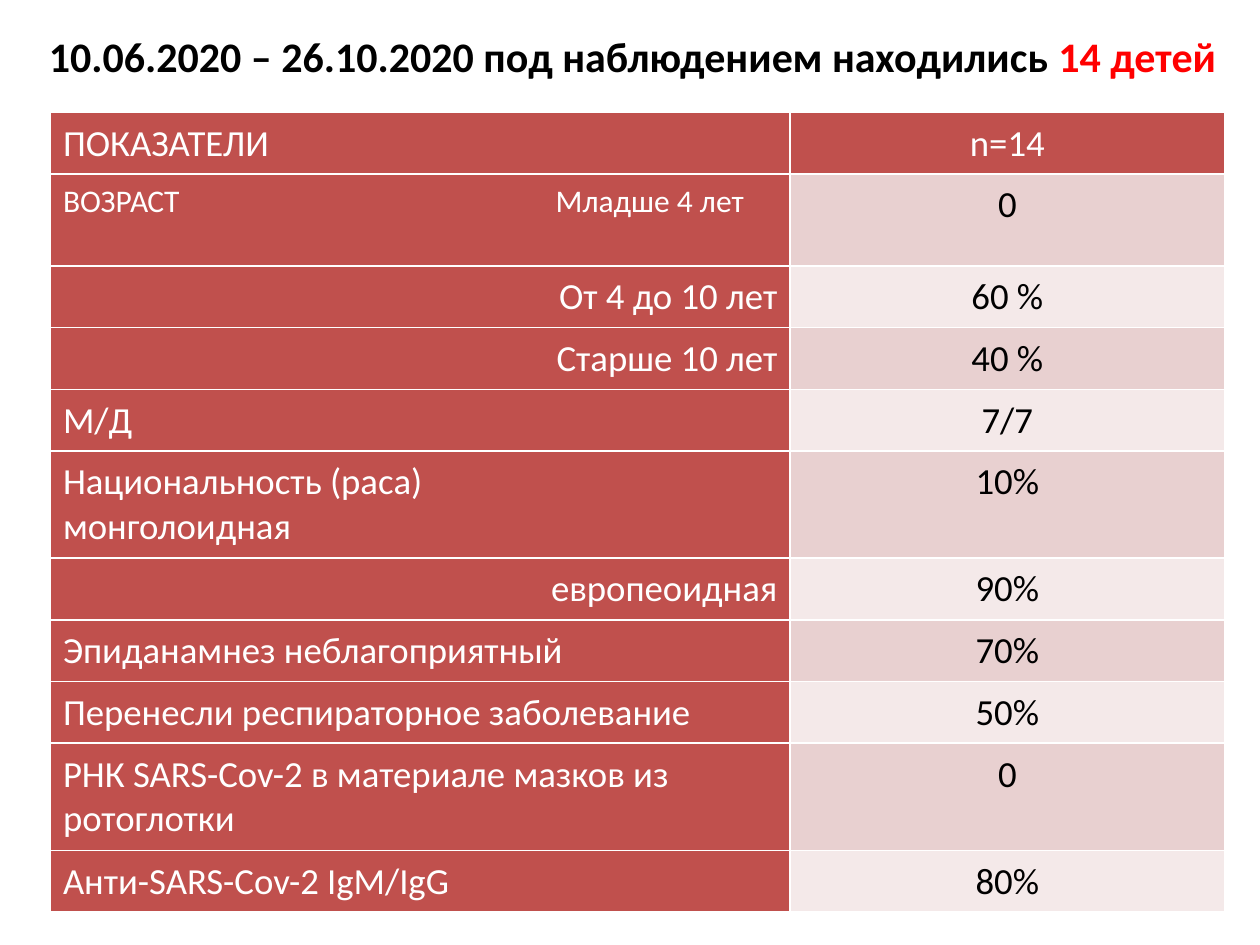
from lxml import etree
from pptx import Presentation
from pptx.dml.color import RGBColor
from pptx.enum.text import MSO_ANCHOR, PP_ALIGN
from pptx.oxml.ns import qn
from pptx.util import Inches, Pt

LEFT, CENTER, RIGHT = PP_ALIGN.LEFT, PP_ALIGN.CENTER, PP_ALIGN.RIGHT
MIDDLE = MSO_ANCHOR.MIDDLE

BLACK = RGBColor(0x00, 0x00, 0x00)
WHITE = RGBColor(0xFF, 0xFF, 0xFF)
RED = RGBColor(0xFF, 0x00, 0x00)
BRICK = RGBColor(0xC0, 0x50, 0x4D)
BANDS = (RGBColor(0xE8, 0xD0, 0xD0), RGBColor(0xF4, 0xE9, 0xE9))

COLUMN_WIDTHS = (5.87, 3.45)
ROW, AGE_ROW, TWO_LINE_ROW = 0.49, 0.73, 0.85
AGE_TAB = 3.91

# label, value, label alignment, row height, label size
INDICATORS = (
    ("ПОКАЗАТЕЛИ", "n=14", LEFT, ROW, 21),
    ("ВОЗРАСТ\tМладше 4 лет", "0", LEFT, AGE_ROW, 18),
    ("От 4 до 10 лет", "60 %", RIGHT, ROW, 21),
    ("Старше 10 лет", "40 %", RIGHT, ROW, 21),
    ("М/Д", "7/7", LEFT, ROW, 21),
    ("Национальность (раса)\vмонголоидная", "10%", LEFT, TWO_LINE_ROW, 21),
    ("европеоидная", "90%", RIGHT, ROW, 21),
    ("Эпиданамнез неблагоприятный", "70%", LEFT, ROW, 21),
    ("Перенесли респираторное заболевание", "50%", LEFT, ROW, 21),
    ("РНК SARS-Cov-2 в материале мазков из ротоглотки", "0", LEFT, TWO_LINE_ROW, 21),
    ("Анти-SARS-Cov-2 IgM/IgG", "80%", LEFT, ROW, 21),
)


class SlideBuilder:
    def __init__(self, slide, font_name="Calibri"):
        self.slide = slide
        self.font_name = font_name

    def style(self, paragraph, size, alignment, bold=False):
        paragraph.alignment = alignment
        paragraph.font.name = self.font_name
        paragraph.font.size = Pt(size)
        paragraph.font.bold = bold

    def title(self, left, top, width, height, parts):
        """Add a centred title from (text, colour) parts."""
        box = self.slide.shapes.add_textbox(
            Inches(left), Inches(top), Inches(width), Inches(height))
        frame = box.text_frame
        frame.word_wrap = True
        frame.vertical_anchor = MIDDLE
        paragraph = frame.paragraphs[0]
        self.style(paragraph, 24, CENTER, bold=True)
        for text, color in parts:
            run = paragraph.add_run()
            run.text = text
            run.font.color.rgb = color

    def borders(self, cell, color=WHITE, width=1):
        properties = cell._tc.get_or_add_tcPr()
        for side in ("a:lnL", "a:lnR", "a:lnT", "a:lnB"):
            line = etree.SubElement(properties, qn(side), w=str(Pt(width)))
            fill = etree.SubElement(line, qn("a:solidFill"))
            etree.SubElement(fill, qn("a:srgbClr"), val=str(color))

    def tab_stop(self, paragraph, position):
        tabs = etree.SubElement(paragraph._p.get_or_add_pPr(), qn("a:tabLst"))
        etree.SubElement(tabs, qn("a:tab"), pos=str(Inches(position)), algn="l")

    def cell(self, cell, text, alignment, size, color, fill):
        cell.margin_left = cell.margin_right = Inches(0.1)
        cell.margin_top = cell.margin_bottom = Inches(0.07)
        self.borders(cell)
        cell.fill.solid()
        cell.fill.fore_color.rgb = fill
        cell.text_frame.text = text
        paragraph = cell.text_frame.paragraphs[0]
        if "\t" in text:
            self.tab_stop(paragraph, AGE_TAB)
        self.style(paragraph, size, alignment)
        paragraph.font.color.rgb = color

    def indicator_table(self, left, top, rows):
        height = sum(row[3] for row in rows)
        table = self.slide.shapes.add_table(
            len(rows), len(COLUMN_WIDTHS), Inches(left), Inches(top),
            Inches(sum(COLUMN_WIDTHS)), Inches(height)).table
        table.first_row = table.horz_banding = False
        for column, width in zip(table.columns, COLUMN_WIDTHS):
            column.width = Inches(width)
        for index, (label, value, alignment, row_height, size) in enumerate(rows):
            table.rows[index].height = Inches(row_height)
            self.cell(table.cell(index, 0), label, alignment, size, WHITE, BRICK)
            if index == 0:
                color, fill = WHITE, BRICK
            else:
                color, fill = BLACK, BANDS[(index - 1) % 2]
            self.cell(table.cell(index, 1), value, CENTER, 21, color, fill)


def main():
    presentation = Presentation()
    presentation.slide_width = Inches(10)
    presentation.slide_height = Inches(7.5)
    slide = presentation.slides.add_slide(presentation.slide_layouts[6])
    builder = SlideBuilder(slide)
    builder.title(0.04, 0, 9.96, 0.89, (
        ("10.06.2020 – 26.10.2020 под наблюдением находились ", BLACK),
        ("14 детей", RED)))
    builder.indicator_table(0.4, 0.89, INDICATORS)
    presentation.save("out.pptx")


if __name__ == "__main__":
    main()
